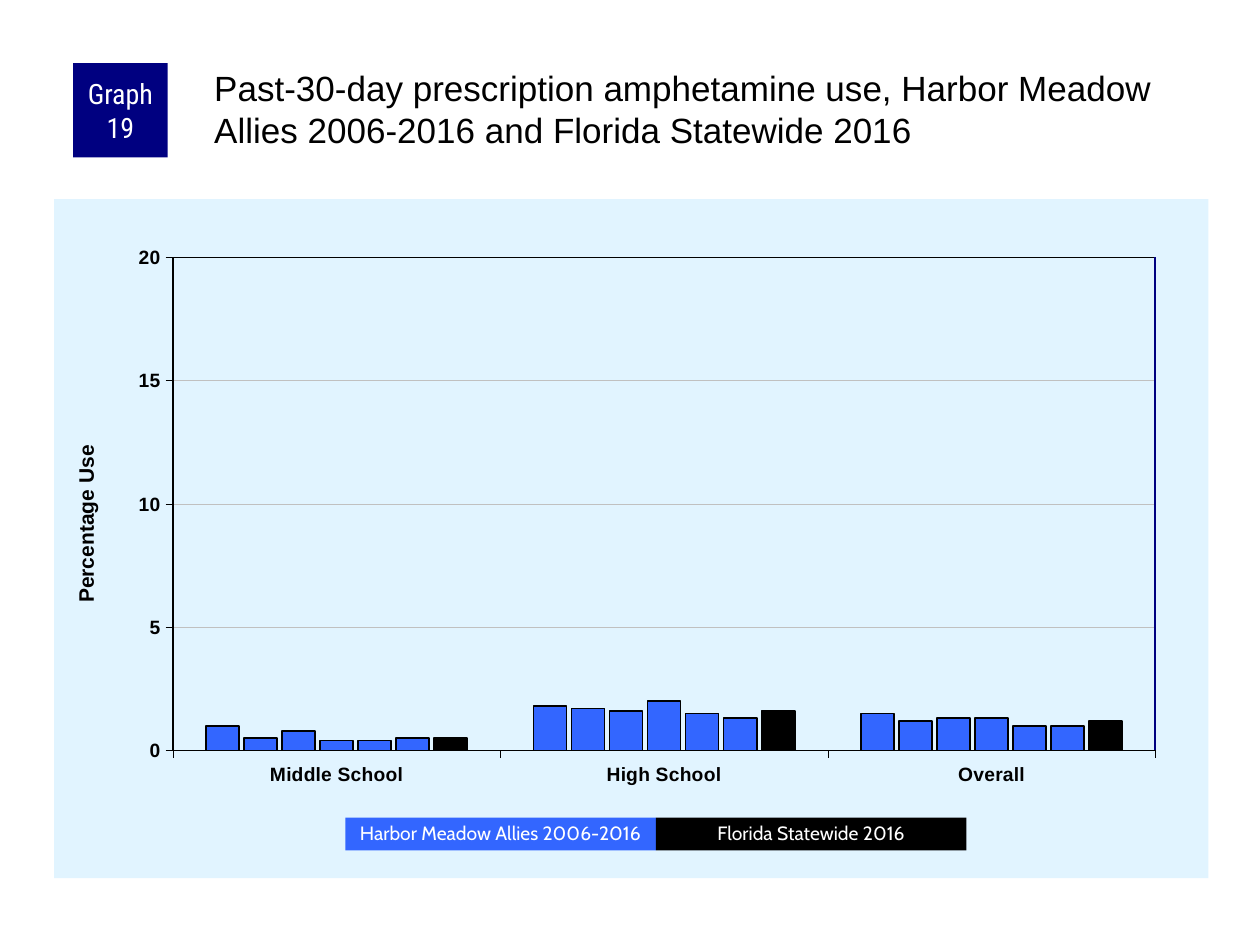
from dataclasses import dataclass

from lxml import etree
from pptx import Presentation
from pptx import util as u
from pptx.chart.data import CategoryChartData
from pptx.dml.color import RGBColor
from pptx.enum import chart as charts, shapes, text
from pptx.oxml import parse_xml
from pptx.oxml.ns import nsdecls, qn


@dataclass(frozen=True)
class Theme:
    panel: str = "E1F4FF"
    navy: str = "000080"
    blue: str = "3366FF"
    black: str = "000000"
    white: str = "FFFFFF"
    grid: str = "C0C0C0"
    body_font: str = "Arial"
    badge_font: str = "Roboto Condensed"
    legend_font: str = "Cabin"
    title_size: int = 20
    badge_size: int = 16
    axis_title_size: int = 12
    label_size: int = 11
    chart_size: int = 8


THEME = Theme()
REGION = "Harbor Meadow Allies"
CATEGORIES = ("Middle School", "High School", "Overall")
SERIES = (
    (1, 1.8, 1.5),
    (0.5, 1.7, 1.2),
    (0.8, 1.6, 1.3),
    (0.4, 2, 1.3),
    (0.4, 1.5, 1),
    (0.5, 1.3, 1),
    (0.5, 1.6, 1.2),
)
PLOT = (0.103, 0.086, 0.851, 0.726)


def inches(box):
    return [u.Inches(value) for value in box]


def style_font(font, name, size, color, bold=False):
    font.name = name
    font.size = u.Pt(size)
    font.bold = bold
    font.color.rgb = RGBColor.from_string(color)


def style_line(line, color, width):
    line.color.rgb = RGBColor.from_string(color)
    line.width = u.Pt(width)


def set_layout(parent, index, values, inner=False):
    for old in parent.findall(qn("c:layout")):
        parent.remove(old)
    target = '<c:layoutTarget val="inner"/>' if inner else ""
    modes = "".join(f'<c:{name}Mode val="edge"/>' for name in "xy")
    sizes = "".join(f'<c:{name} val="{value}"/>' for name, value in zip("xywh", values))
    parent.insert(index, parse_xml(
        f'<c:layout {nsdecls("c")}><c:manualLayout>{target}{modes}{sizes}'
        "</c:manualLayout></c:layout>"))


def shape_properties(fill, line):
    return parse_xml(f'<c:spPr {nsdecls("c", "a")}>{fill}<a:ln w="12700">{line}</a:ln></c:spPr>')


def solid(color):
    return f'<a:solidFill><a:srgbClr val="{color}"/></a:solidFill>'


def add_title(slide, box, wording):
    title = slide.shapes.title
    title.left, title.top, title.width, title.height = inches(box)
    frame = title.text_frame
    frame.text = wording
    frame.word_wrap = True
    frame.auto_size = text.MSO_AUTO_SIZE.NONE
    frame.vertical_anchor = text.MSO_ANCHOR.TOP
    frame.margin_left = frame.margin_top = u.Inches(0.03)
    frame.margin_right = frame.margin_bottom = 0
    paragraph = frame.paragraphs[0]
    paragraph.alignment = text.PP_ALIGN.LEFT
    paragraph.line_spacing = 1.0
    paragraph.space_before = u.Pt(0)
    style_font(paragraph.runs[0].font, THEME.body_font, THEME.title_size, THEME.black)


def add_label(slide, box, wording, fill, font, size, spacing=1.0):
    shape = slide.shapes.add_shape(shapes.MSO_SHAPE.RECTANGLE, *inches(box))
    shape.shadow.inherit = False
    shape.fill.solid()
    shape.fill.fore_color.rgb = RGBColor.from_string(fill)
    shape.line.fill.background()
    frame = shape.text_frame
    frame.text = wording
    frame.word_wrap = True
    frame.vertical_anchor = text.MSO_ANCHOR.MIDDLE
    frame.margin_left = frame.margin_right = u.Inches(0.05)
    frame.margin_top = frame.margin_bottom = 0
    paragraph = frame.paragraphs[0]
    paragraph.alignment = text.PP_ALIGN.CENTER
    paragraph.line_spacing = spacing
    style_font(paragraph.runs[0].font, font, size, THEME.white)


def add_legend(slide, box):
    left, top, width, height = box
    entries = ((f"{REGION} 2006-2016", THEME.blue),
               ("Florida Statewide 2016", THEME.black))
    entry_width = width / len(entries)
    for index, (wording, fill) in enumerate(entries):
        add_label(slide, (left + index * entry_width, top, entry_width, height),
                  wording, fill, THEME.legend_font, THEME.label_size, 0.9)


def format_axes(chart):
    for axis in (chart.category_axis, chart.value_axis):
        axis.major_tick_mark = charts.XL_TICK_MARK.OUTSIDE
        axis.minor_tick_mark = charts.XL_TICK_MARK.NONE
        style_line(axis.format.line, THEME.black, 0.25)
        style_font(axis.tick_labels.font, THEME.body_font, THEME.label_size, THEME.black, True)
    chart.category_axis.has_major_gridlines = False
    axis = chart.value_axis
    axis.minimum_scale, axis.maximum_scale, axis.major_unit = 0, 20, 5
    axis.tick_labels.number_format = "0"
    axis.tick_labels.number_format_is_linked = False
    axis.has_major_gridlines = True
    style_line(axis.major_gridlines.format.line, THEME.grid, 0.25)
    axis.has_title = True
    frame = axis.axis_title.text_frame
    frame.text = "Percentage Use"
    style_font(frame.paragraphs[0].runs[0].font, THEME.body_font,
               THEME.axis_title_size, THEME.black, True)
    set_layout(axis.axis_title._element, 1, (0.013, 0.357))


def add_plot_edges(slide, box):
    left, top, width, height = box
    x = left + width * PLOT[0]
    y = top + height * PLOT[1]
    right = x + width * PLOT[2]
    bottom = y + height * PLOT[3]
    edges = (((x, y, right, y), THEME.black, 0.75),
             ((right, y, right, bottom), THEME.navy, 1))
    for ends, color, weight in edges:
        edge = slide.shapes.add_connector(shapes.MSO_CONNECTOR.STRAIGHT, *inches(ends))
        style_line(edge.line, color, weight)
        etree.SubElement(edge._element.spPr, qn("a:effectLst"))


def add_usage_chart(slide, box):
    data = CategoryChartData()
    data.categories = CATEGORIES
    for number, values in enumerate(SERIES, 1):
        data.add_series(f"Series {number}", values)
    chart = slide.shapes.add_chart(
        charts.XL_CHART_TYPE.COLUMN_CLUSTERED, *inches(box), data).chart
    chart.has_title = chart.has_legend = False
    style_font(chart.font, THEME.body_font, THEME.chart_size, THEME.black)
    plot = chart.plots[0]
    plot.gap_width, plot.overlap, plot.vary_by_categories = 200, -15, False
    for index, series in enumerate(plot.series):
        statewide = index == len(SERIES) - 1
        series.format.fill.solid()
        series.format.fill.fore_color.rgb = RGBColor.from_string(
            THEME.black if statewide else THEME.blue)
        style_line(series.format.line, THEME.black, 1)
    format_axes(chart)
    chart_element = chart._chartSpace.find(qn("c:chart"))
    plot_area = chart_element.find(qn("c:plotArea"))
    set_layout(plot_area, 0, PLOT, inner=True)
    plot_area.append(shape_properties("<a:noFill/>", solid(THEME.black)))
    chart_element.addnext(shape_properties(solid(THEME.panel), "<a:noFill/>"))
    add_plot_edges(slide, box)


def main():
    presentation = Presentation()
    presentation.slide_width, presentation.slide_height = u.Inches(10), u.Inches(7.5)
    slide = presentation.slides.add_slide(presentation.slide_layouts[5])
    add_usage_chart(slide, (0.43, 1.58, 9.16, 5.39))
    add_label(slide, (0.58, 0.5, 0.75, 0.75), "Graph 19", THEME.navy,
              THEME.badge_font, THEME.badge_size)
    add_title(slide, (1.67, 0.5, 7.92, 0.83),
              f"Past-30-day prescription amphetamine use, {REGION} "
              "2006-2016 and Florida Statewide 2016")
    add_legend(slide, (2.74, 6.49, 4.93, 0.26))
    presentation.save("out.pptx")


if __name__ == "__main__":
    main()
